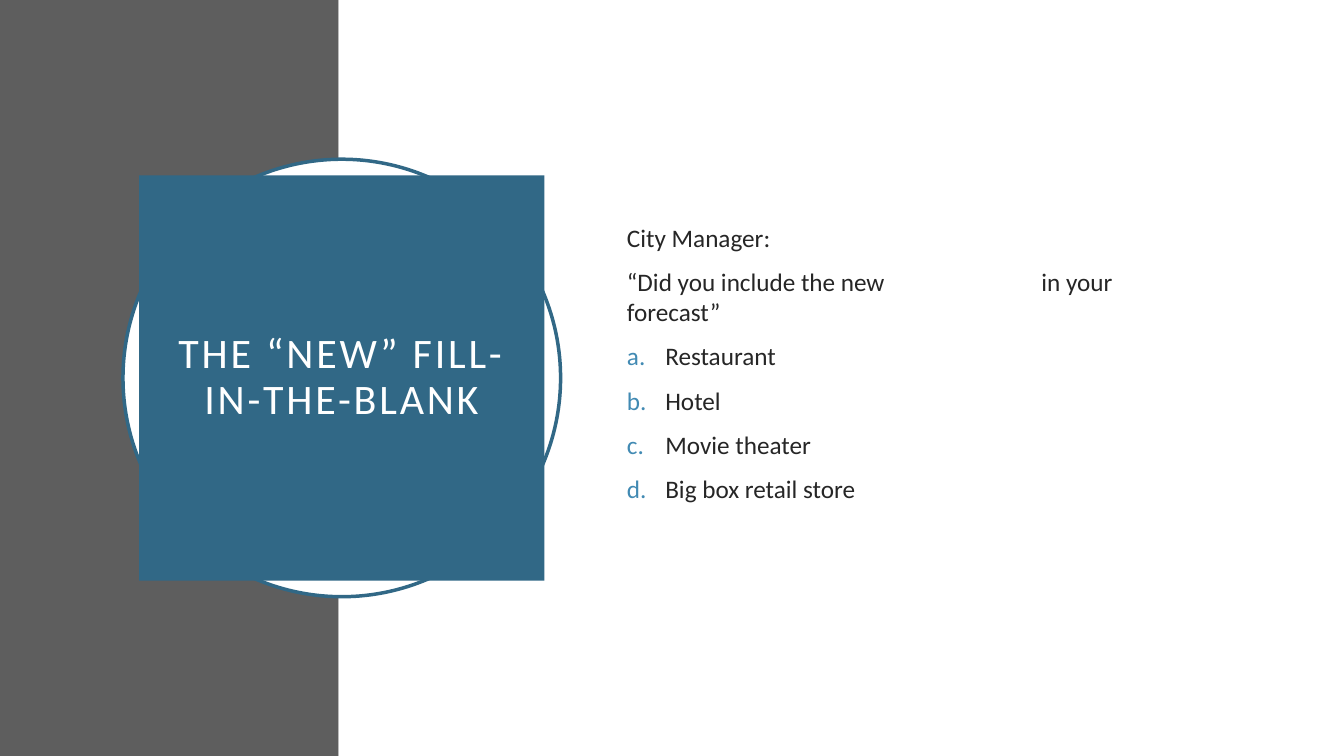
import pptx
import pptx.dml.color
import pptx.enum.shapes
import pptx.enum.text
import pptx.oxml
import pptx.oxml.ns
import pptx.util
from pptx.util import Inches

SLIDE_WIDTH, SLIDE_HEIGHT = 13.33, 7.5
FONT = "Calibri"
BLUE, GRAY, WHITE, INK, MARKER = "316886", "5E5E5E", "FFFFFF", "262626", "418AB3"
TITLE = "THE “NEW” FILL-IN-THE-BLANK"
PROMPT = ["City Manager:", "“Did you include the new\tin your forecast”"]
ANSWERS = ["Restaurant", "Hotel", "Movie theater", "Big box retail store"]
BLANK_END = 4.11
ANSWER_INDENT = 0.38


def color(hex_string):
    return pptx.dml.color.RGBColor.from_string(hex_string)


def add_plain_shape(slide, kind, box, fill, line=None):
    shape = slide.shapes.add_shape(kind, *map(Inches, box))
    shape.shadow.inherit = False
    shape.fill.solid()
    shape.fill.fore_color.rgb = color(fill)
    if line:
        shape.line.color.rgb = color(line)
        shape.line.width = pptx.util.Pt(2.5)
    else:
        shape.line.fill.background()
    return shape


def style_font(font, size, hex_string):
    font.name = FONT
    font.size = pptx.util.Pt(size)
    font.color.rgb = color(hex_string)


def add_panels(slide, box, split):
    left, top, width, height = box
    rectangle = pptx.enum.shapes.MSO_SHAPE.RECTANGLE
    add_plain_shape(slide, rectangle, (left, top, split, height), GRAY)
    add_plain_shape(slide, rectangle, (left + split, top, width - split, height), WHITE)


def add_title_badge(slide, box, margin):
    left, top, width, height = box
    add_plain_shape(slide, pptx.enum.shapes.MSO_SHAPE.OVAL, box, WHITE, BLUE)
    title = slide.shapes.title
    slide.shapes._spTree.append(title._element)
    title.left, title.top = Inches(left + margin), Inches(top + margin)
    title.width, title.height = Inches(width - 2 * margin), Inches(height - 2 * margin)
    title.fill.solid()
    title.fill.fore_color.rgb = color(BLUE)
    frame = title.text_frame
    frame.text = TITLE
    frame.word_wrap = True
    frame.auto_size = pptx.enum.text.MSO_AUTO_SIZE.NONE
    frame.vertical_anchor = pptx.enum.text.MSO_ANCHOR.MIDDLE
    frame.margin_left = frame.margin_right = Inches(0.2)
    frame.margin_top = frame.margin_bottom = Inches(0.2)
    paragraph = frame.paragraphs[0]
    paragraph.alignment = pptx.enum.text.PP_ALIGN.CENTER
    paragraph.line_spacing = 0.9
    run = paragraph.runs[0]
    style_font(run.font, 30, WHITE)
    run._r.get_or_add_rPr().set("spc", "200")


def add_element(parent, tag, **attributes):
    element = pptx.oxml.ns.qn(tag)
    child = parent.makeelement(element, attributes)
    parent.append(child)
    return child


def add_letter(paragraph):
    properties = paragraph._p.get_or_add_pPr()
    indent = Inches(ANSWER_INDENT)
    properties.set("marL", str(indent))
    properties.set("indent", str(-indent))
    marker = add_element(properties, "a:buClr")
    add_element(marker, "a:srgbClr", val=MARKER)
    add_element(properties, "a:buFont", typeface="+mj-lt")
    add_element(properties, "a:buAutoNum", type="alphaLcPeriod")


def add_blank_stop(paragraph):
    stops = add_element(paragraph._p.get_or_add_pPr(), "a:tabLst")
    add_element(stops, "a:tab", pos=str(Inches(BLANK_END)), algn="l")


def add_question(slide, box):
    frame = slide.shapes.add_textbox(*map(Inches, box)).text_frame
    frame.word_wrap = True
    frame.vertical_anchor = pptx.enum.text.MSO_ANCHOR.MIDDLE
    frame.margin_bottom = Inches(0.34)
    for index, text in enumerate(PROMPT + ANSWERS):
        paragraph = frame.add_paragraph() if index else frame.paragraphs[0]
        paragraph.text = text
        paragraph.space_before = pptx.util.Pt(10 if index else 0)
        if "\t" in text:
            add_blank_stop(paragraph)
        if text in ANSWERS:
            add_letter(paragraph)
        for run in paragraph.runs:
            style_font(run.font, 18, INK)


def main():
    presentation = pptx.Presentation()
    presentation.slide_width = Inches(SLIDE_WIDTH)
    presentation.slide_height = Inches(SLIDE_HEIGHT)
    slide = presentation.slides.add_slide(presentation.slide_layouts[5])
    add_panels(slide, (0, 0, SLIDE_WIDTH, SLIDE_HEIGHT), 3.36)
    add_title_badge(slide, (1.22, 1.58, 4.34, 4.34), 0.16)
    add_question(slide, (6.12, 1.53, 5.82, 4.43))
    presentation.save("out.pptx")


if __name__ == "__main__":
    main()
